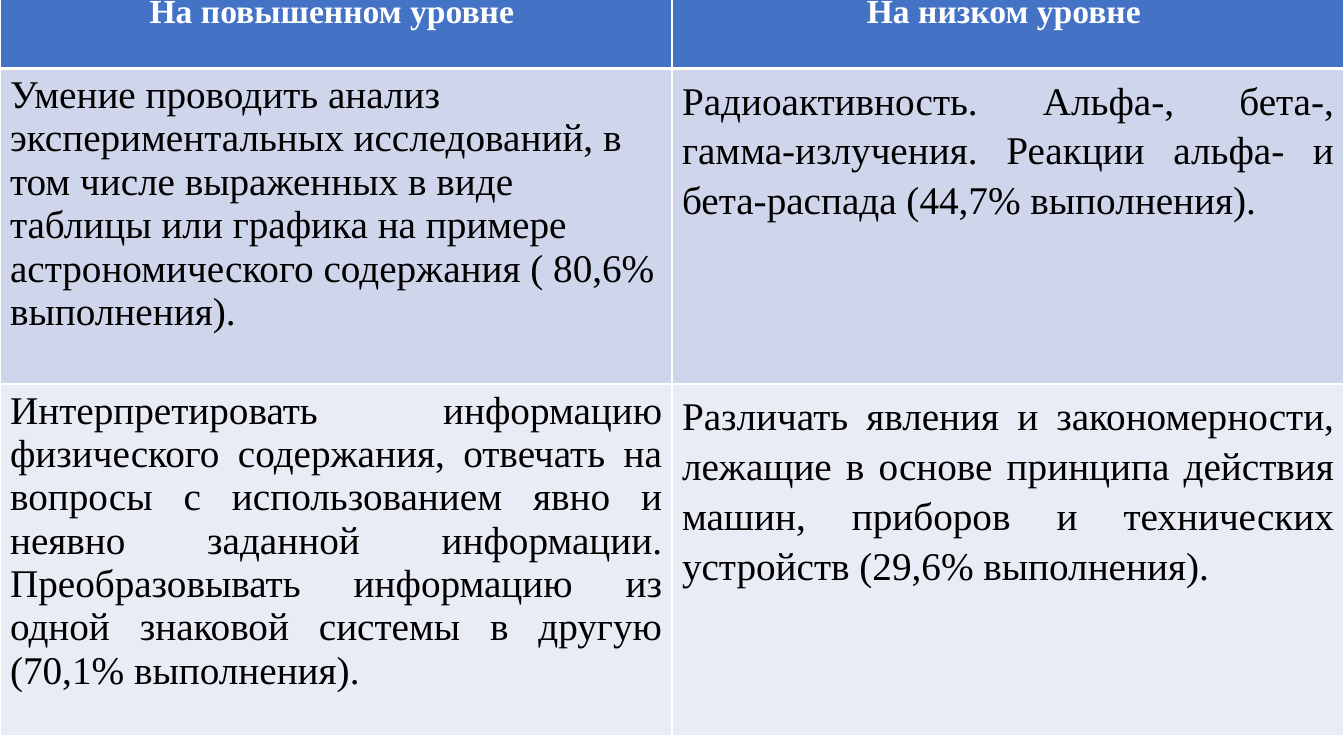
from lxml.etree import SubElement
from pptx import Presentation
from pptx.dml.color import RGBColor
from pptx.enum.text import PP_ALIGN
from pptx.oxml.ns import qn
from pptx.util import Inches, Pt

WHITE = RGBColor(0xFF, 0xFF, 0xFF)
BLACK = RGBColor(0x00, 0x00, 0x00)
HEADER_BLUE = RGBColor(0x44, 0x72, 0xC4)
BAND_DARK = RGBColor(0xCF, 0xD5, 0xEA)
BAND_LIGHT = RGBColor(0xE9, 0xEB, 0xF5)

FONT = "Times New Roman"
ROW_SHARES = [0.79, 3.13, 3.49]
ROW_FILLS = [HEADER_BLUE, BAND_DARK, BAND_LIGHT]
LEVELS = [
    ["На повышенном уровне ", "На низком уровне "],
    [
        "Умение проводить анализ экспериментальных исследований, в том числе "
        "выраженных в виде таблицы или графика на примере астрономического "
        "содержания ( 80,6% выполнения).",
        "Радиоактивность. Альфа-, бета-, гамма-излучения. Реакции альфа- и "
        "бета-распада (44,7% выполнения).",
    ],
    [
        "Интерпретировать информацию физического содержания, отвечать на вопросы "
        "с использованием явно и неявно заданной информации. Преобразовывать "
        "информацию из одной знаковой системы в другую (70,1% выполнения).",
        "Различать явления и закономерности, лежащие в основе принципа действия "
        "машин, приборов и технических устройств (29,6% выполнения).",
    ],
]
ALIGNMENTS = [
    [PP_ALIGN.CENTER, PP_ALIGN.CENTER],
    [PP_ALIGN.LEFT, PP_ALIGN.JUSTIFY],
    [PP_ALIGN.JUSTIFY, PP_ALIGN.JUSTIFY],
]


def add_borders(cell, bottom_width):
    properties = cell._tc.get_or_add_tcPr()
    widths = {"a:lnL": 1, "a:lnR": 1, "a:lnT": 1, "a:lnB": bottom_width}
    for side, width in widths.items():
        line = SubElement(properties, qn(side), w=str(Pt(width)))
        fill = SubElement(line, qn("a:solidFill"))
        SubElement(fill, qn("a:srgbClr"), val=str(WHITE))


def write_cell(cell, text, alignment, is_header, is_spaced):
    para = cell.text_frame.paragraphs[0]
    para.alignment = alignment
    if is_spaced:
        para.line_spacing = 1.15
        para.space_after = Pt(10)
    span = para.add_run()
    span.text = text
    span.font.name = FONT
    span.font.size = Pt(24 if is_header else 28)
    span.font.bold = is_header
    span.font.color.rgb = WHITE if is_header else BLACK


def add_levels_table(page, left, top, width, height):
    frame = page.shapes.add_table(len(LEVELS), len(LEVELS[0]), left, top, width, height)
    table = frame.table
    for column in table.columns:
        column.width = width // len(LEVELS[0])
    for row, share in zip(table.rows, ROW_SHARES):
        row.height = int(height * share / sum(ROW_SHARES))
    for row_index, texts in enumerate(LEVELS):
        is_header = row_index == 0
        for column_index, text in enumerate(texts):
            cell = table.cell(row_index, column_index)
            add_borders(cell, 3 if is_header else 1)
            cell.fill.solid()
            cell.fill.fore_color.rgb = ROW_FILLS[row_index]
            is_spaced = not is_header and column_index == 1
            alignment = ALIGNMENTS[row_index][column_index]
            write_cell(cell, text, alignment, is_header, is_spaced)


def main():
    deck = Presentation()
    deck.slide_width = Inches(13.33)
    deck.slide_height = Inches(7.5)
    page = deck.slides.add_slide(deck.slide_layouts[6])
    add_levels_table(page, Inches(0), Inches(-0.11), deck.slide_width, Inches(7.41))
    deck.save("out.pptx")


if __name__ == "__main__":
    main()
